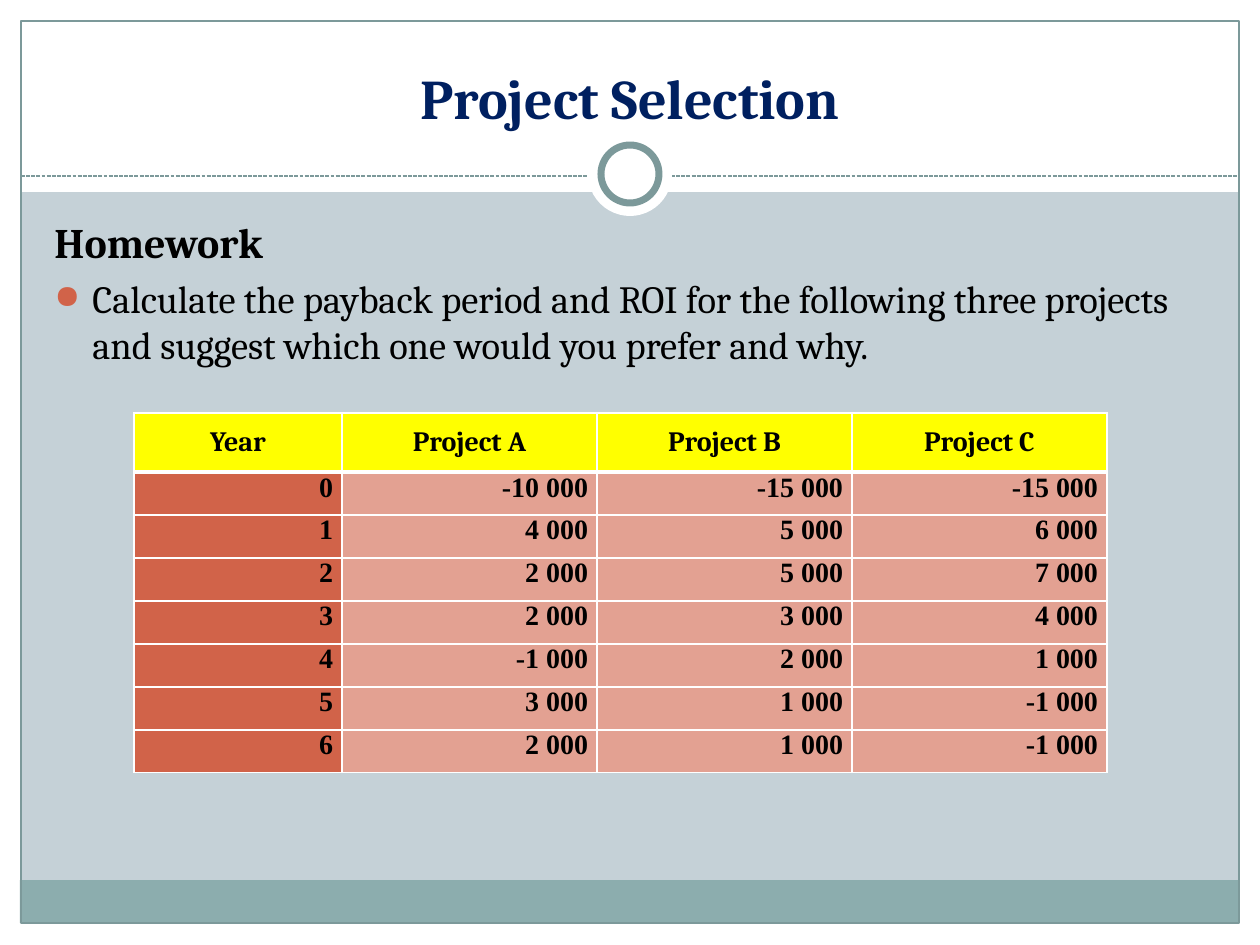
import pptx
import pptx.dml.color
import pptx.enum.dml
import pptx.enum.shapes
import pptx.enum.text
import pptx.oxml
import pptx.oxml.ns
import pptx.util

PX = pptx.util.Inches(1) / 126
WIDTH, HEIGHT = 1260, 945
COLORS = {
    "background": "C5D1D7", "white": "FFFFFF", "band": "8CADAE",
    "outline": "7C999A", "title": "002060", "text": "000000",
    "accent": "D16349", "value": "E3A192", "header": "FFFF00",
}
SHAPES = pptx.enum.shapes.MSO_SHAPE
ALIGN = pptx.enum.text.PP_ALIGN
ANCHOR = pptx.enum.text.MSO_ANCHOR
PANELS = [
    ((0, 924, WIDTH, 21), "white"),
    ((0, 0, WIDTH, 192), "white"),
    ((0, 0, 21, HEIGHT), "white"),
    ((1239, 0, 21, HEIGHT), "white"),
    ((20, 880, 1218, 43), "band"),
]
HEADINGS = ["Year", "Project A", "Project B", "Project C"]
CASH_FLOWS = [
    ["0", "-10 000", "-15 000", "-15 000"],
    ["1", "4 000", "5 000", "6 000"],
    ["2", "2 000", "5 000", "7 000"],
    ["3", "2 000", "3 000", "4 000"],
    ["4", "-1 000", "2 000", "1 000"],
    ["5", "3 000", "1 000", "-1 000"],
    ["6", "2 000", "1 000", "-1 000"],
]
QUESTION = ("Calculate the payback period and ROI for the following three projects "
            "and suggest which one would you prefer and why.")


def emu(*lengths):
    return [pptx.util.Emu(round(length * PX)) for length in lengths]


def rgb(name):
    return pptx.dml.color.RGBColor.from_string(COLORS[name])


def element(markup):
    namespace = pptx.oxml.ns.nsdecls("a")
    return pptx.oxml.parse_xml(markup.replace(">", f" {namespace}>", 1)
                               if "/>" not in markup.split(">")[0] + ">"
                               else markup.replace("/>", f" {namespace}/>", 1))


def set_attributes(target, values):
    for name, value in values.items():
        setattr(target, name, value)


def paint(fill, color):
    fill.solid()
    fill.fore_color.rgb = rgb(color)


def add_shape(slide, kind, box, fill=None, line=None, weight=0.75):
    shape = slide.shapes.add_shape(kind, *emu(*box))
    shape.shadow.inherit = False
    if fill:
        paint(shape.fill, fill)
    else:
        shape.fill.background()
    if line:
        paint(shape.line.fill, line)
        shape.line.width = pptx.util.Pt(weight)
    else:
        shape.line.fill.background()


def add_divider(slide, left, right, y):
    line = slide.shapes.add_connector(
        pptx.enum.shapes.MSO_CONNECTOR.STRAIGHT, *emu(left, y, right, y))
    paint(line.line.fill, "outline")
    set_attributes(line.line, {
        "width": pptx.util.Pt(0.75),
        "dash_style": pptx.enum.dml.MSO_LINE.SQUARE_DOT,
    })
    line._element.spPr.append(element("<a:effectLst/>"))


def write(paragraph, text, size, bold=True, font="Cambria", color="text", **layout):
    run = paragraph.add_run()
    run.text = text
    set_attributes(run.font, {"name": font, "size": pptx.util.Pt(size), "bold": bold})
    run.font.color.rgb = rgb(color)
    set_attributes(paragraph, layout)


def add_text_frame(slide, box, anchor):
    frame = slide.shapes.add_textbox(*emu(*box)).text_frame
    set_attributes(frame, {"word_wrap": True, "vertical_anchor": anchor})
    return frame


def add_bullet(paragraph, indent):
    properties = paragraph._p.get_or_add_pPr()
    offset = emu(indent)[0]
    properties.set("marL", str(offset))
    properties.set("indent", str(-offset))
    for markup in (f'<a:buClr><a:srgbClr val="{COLORS["accent"]}"/></a:buClr>',
                   '<a:buSzPct val="85000"/>', '<a:buChar char="●"/>'):
        properties.append(element(markup))


def set_borders(cell, weights):
    properties = cell._tc.get_or_add_tcPr()
    for index, (side, weight) in enumerate(weights.items()):
        properties.insert(index, element(
            f'<a:ln{side} w="{pptx.util.Pt(weight)}"><a:solidFill>'
            f'<a:srgbClr val="{COLORS["white"]}"/></a:solidFill></a:ln{side}>'))


def fill_cell(cell, text, row, column):
    header = row == 0
    margin = emu(9)[0]
    set_attributes(cell, {
        "margin_left": margin, "margin_right": margin,
        "margin_top": 0, "margin_bottom": 0,
        "vertical_anchor": ANCHOR.MIDDLE if header else ANCHOR.TOP,
    })
    write(cell.text_frame.paragraphs[0], text, 16,
          font="Cambria" if header else "Times New Roman",
          alignment=ALIGN.CENTER if header else ALIGN.RIGHT)
    paint(cell.fill, "header" if header else "value" if column else "accent")
    set_borders(cell, {"L": 1, "R": 1, "T": 3 if row == 1 else 1, "B": 3 if header else 1})


def add_cash_flow_table(slide, left, top):
    widths = [208, 255, 255, 255]
    heights = [59] + [43] * len(CASH_FLOWS)
    table = slide.shapes.add_table(
        len(heights), len(widths), *emu(left, top, sum(widths), sum(heights))).table
    for column, width in zip(table.columns, emu(*widths)):
        column.width = width
    for row, height in zip(table.rows, emu(*heights)):
        row.height = height
    for row, values in enumerate([HEADINGS] + CASH_FLOWS):
        for column, text in enumerate(values):
            fill_cell(table.cell(row, column), text, row, column)


def add_frame(slide):
    for box, color in PANELS:
        add_shape(slide, SHAPES.RECTANGLE, box, color)
    add_shape(slide, SHAPES.RECTANGLE, (21, 21, 1218, 902), line="outline")
    add_divider(slide, 21, 1239, 176)
    add_shape(slide, SHAPES.OVAL, (588, 132, 84, 84), "white")
    add_shape(slide, SHAPES.OVAL, (601, 145, 58, 58), "white", "outline", 4)


def main():
    """Build the project selection homework slide."""
    presentation = pptx.Presentation()
    presentation.slide_width, presentation.slide_height = emu(WIDTH, HEIGHT)
    slide = presentation.slides.add_slide(presentation.slide_layouts[6])
    paint(slide.background.fill, "background")
    add_frame(slide)
    title = add_text_frame(slide, (42, 32, 1176, 105), ANCHOR.BOTTOM)
    write(title.paragraphs[0], "Project Selection", 32, color="title", alignment=ALIGN.CENTER)
    body = add_text_frame(slide, (42, 210, 1144, 630), ANCHOR.TOP)
    spacing = pptx.util.Pt(5)
    write(body.paragraphs[0], "Homework", 24, space_before=spacing)
    question = body.add_paragraph()
    write(question, QUESTION, 22, bold=False, space_before=spacing)
    add_bullet(question, 38)
    add_cash_flow_table(slide, 134, 413)
    presentation.save("out.pptx")


if __name__ == "__main__":
    main()
